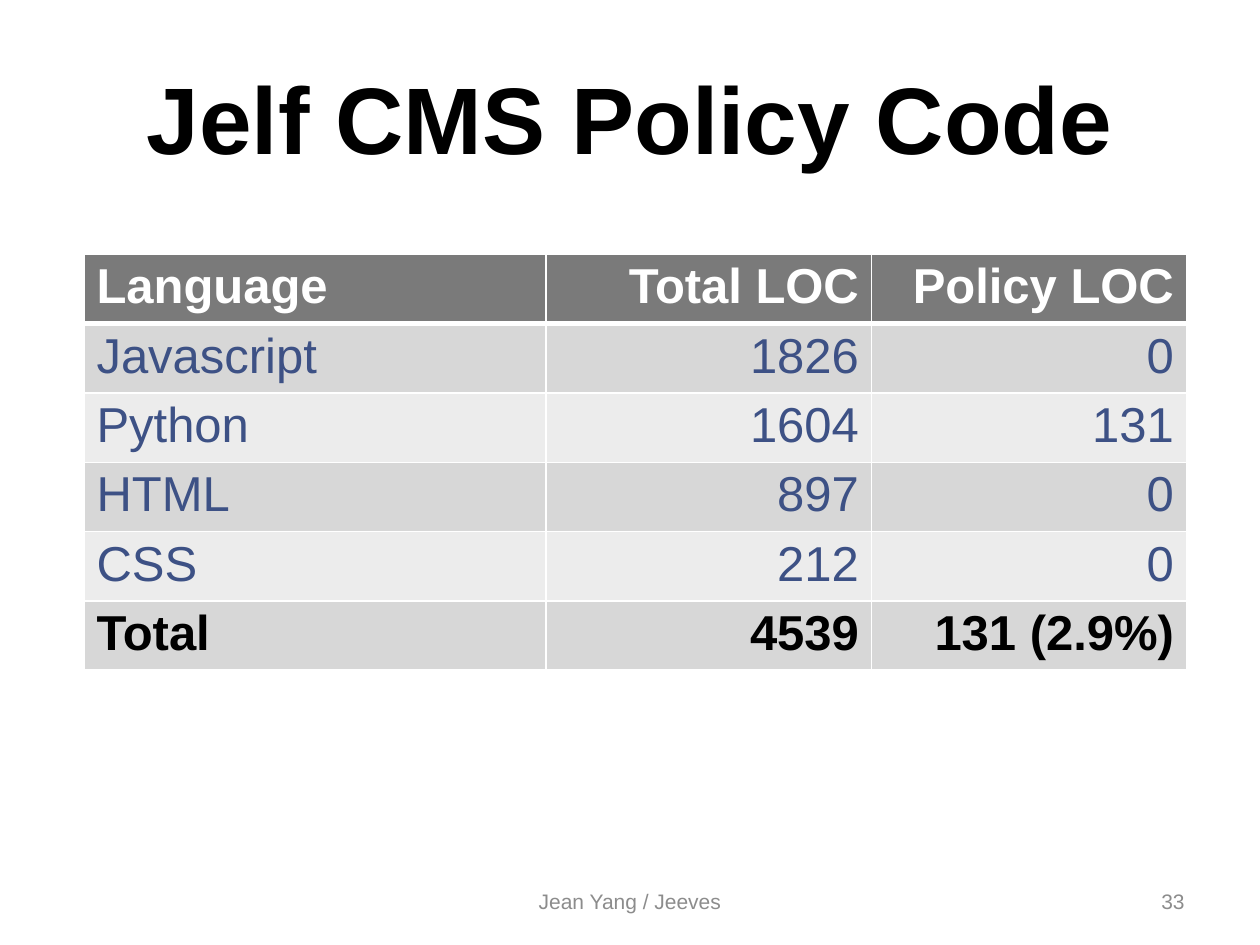
from lxml import etree
from pptx import Presentation
from pptx.dml.color import RGBColor
from pptx.enum import text
from pptx.oxml import ns
from pptx.util import Pt

COLORS = {"black": "000000", "white": "FFFFFF", "blue": "3D5185", "gray": "8C8C8C",
          "header": "7A7A7A", "dark_band": "D7D7D7", "light_band": "ECECEC"}
FONT = "Arial"
LEFT, CENTER, RIGHT = text.PP_ALIGN.LEFT, text.PP_ALIGN.CENTER, text.PP_ALIGN.RIGHT

TEXTS = [
    ("Jelf CMS Policy Code", (36, 21.6, 648, 90), 54, "black", True, CENTER),
    ("33", (516, 500.4, 168, 28.8), 12, "gray", False, RIGHT),
    ("Jean Yang / Jeeves", (246, 500.4, 228, 28.8), 12, "gray", False, CENTER),
]
ROWS = [
    ("Language", "Total LOC", "Policy LOC"),
    ("Javascript", "1826", "0"),
    ("Python", "1604", "131"),
    ("HTML", "897", "0"),
    ("CSS", "212", "0"),
    ("Total", "4539", "131 (2.9%)"),
]
COL_WIDTHS = (264, 186, 180)
ROW_HEIGHT = 38.4
TABLE_LEFT, TABLE_TOP = 48, 145.4


def rgb(name):
    return RGBColor.from_string(COLORS[name])


def style(p, size, color, bold, align):
    p.alignment = align
    p.font.name, p.font.size, p.font.bold = FONT, Pt(size), bold
    p.font.color.rgb = rgb(color)


def add_text(s, content, box, size, color, bold, align):
    tf = s.shapes.add_textbox(*map(Pt, box)).text_frame
    tf.word_wrap = True
    tf.vertical_anchor = text.MSO_ANCHOR.MIDDLE
    p = tf.paragraphs[0]
    p.text = content
    style(p, size, color, bold, align)


def set_borders(cell, widths):
    tc_pr = cell._tc.get_or_add_tcPr()
    for i, (side, width) in enumerate(widths.items()):
        ln = etree.Element(ns.qn(f"a:ln{side}"), w=str(Pt(width)))
        fill = etree.SubElement(ln, ns.qn("a:solidFill"))
        etree.SubElement(fill, ns.qn("a:srgbClr"), val=COLORS["white"])
        tc_pr.insert(i, ln)


def row_style(i):
    if i == 0:
        return "header", "white", True
    band = "dark_band" if i % 2 else "light_band"
    last = i == len(ROWS) - 1
    return band, "black" if last else "blue", last


def add_loc_table(s):
    table = s.shapes.add_table(len(ROWS), len(COL_WIDTHS), Pt(TABLE_LEFT), Pt(TABLE_TOP),
                               Pt(sum(COL_WIDTHS)), Pt(ROW_HEIGHT * len(ROWS))).table
    for col, width in zip(table.columns, COL_WIDTHS):
        col.width = Pt(width)
    for i, values in enumerate(ROWS):
        table.rows[i].height = Pt(ROW_HEIGHT)
        band, color, bold = row_style(i)
        for j, value in enumerate(values):
            cell = table.cell(i, j)
            cell.margin_top = cell.margin_bottom = Pt(3)
            cell.fill.solid()
            cell.fill.fore_color.rgb = rgb(band)
            set_borders(cell, {"L": 1, "R": 1, "T": 3 if i == 1 else 1, "B": 3 if i == 0 else 1})
            p = cell.text_frame.paragraphs[0]
            p.text = value
            style(p, 28, color, bold, RIGHT if j else LEFT)


def main():
    prs = Presentation()
    prs.slide_width, prs.slide_height = Pt(720), Pt(540)
    s = prs.slides.add_slide(prs.slide_layouts[6])
    for item in TEXTS:
        add_text(s, *item)
    add_loc_table(s)
    prs.save("out.pptx")


if __name__ == "__main__":
    main()
